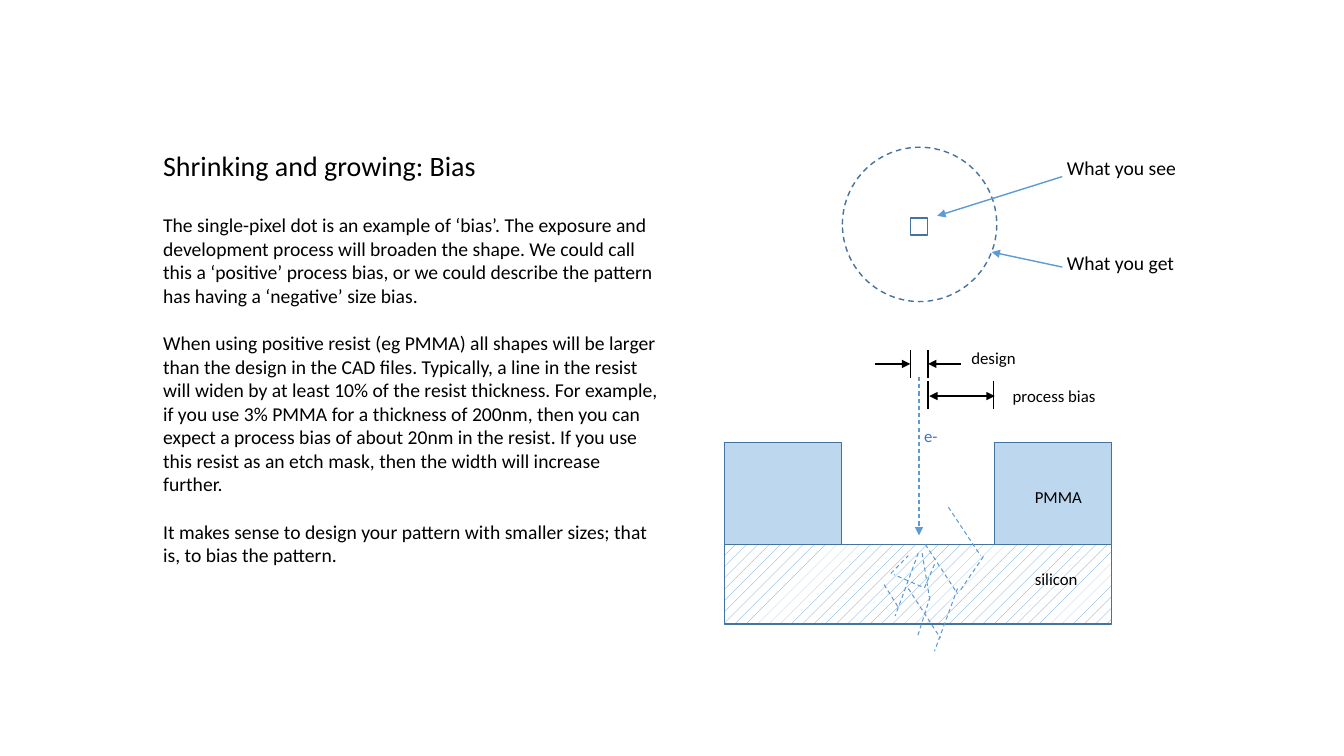
"""Build a slide that explains process bias in resist, with a diagram of exposure."""
from lxml import etree
from pptx import Presentation
from pptx.dml.color import RGBColor
from pptx.enum.dml import MSO_LINE, MSO_PATTERN
from pptx.enum.shapes import MSO_CONNECTOR, MSO_SHAPE
from pptx.enum.text import MSO_ANCHOR, MSO_AUTO_SIZE, PP_ALIGN
from pptx.oxml.ns import qn
from pptx.util import Cm, Pt

BLACK = RGBColor(0x00, 0x00, 0x00)
WHITE = RGBColor(0xFF, 0xFF, 0xFF)
OUTLINE = RGBColor(0x43, 0x73, 0x9E)
BLUE = RGBColor(0x5B, 0x9B, 0xD5)
RESIST = RGBColor(0xBD, 0xD7, 0xEE)
ELECTRON = RGBColor(0x44, 0x72, 0xC4)
STRAIGHT = MSO_CONNECTOR.STRAIGHT
RECTANGLE, OVAL = MSO_SHAPE.RECTANGLE, MSO_SHAPE.OVAL
DASH = MSO_LINE.DASH
PERCENT_10 = MSO_PATTERN.PERCENT_10
FRAME_FORMAT = {
    "word_wrap": True,
    "auto_size": MSO_AUTO_SIZE.NONE,
    "vertical_anchor": MSO_ANCHOR.TOP,
    "margin_left": Cm(0.25),
    "margin_right": Cm(0.25),
    "margin_top": Cm(0.13),
    "margin_bottom": Cm(0.13),
}
PARAGRAPH_FORMAT = {
    "alignment": PP_ALIGN.LEFT,
    "line_spacing": 1.0,
    "space_before": Pt(0),
    "space_after": Pt(0),
}


def write_text(shape, box, paragraphs, size, color=BLACK):
    shape.left, shape.top, shape.width, shape.height = map(Cm, box)
    frame = shape.text_frame
    frame.text = "\n".join(paragraphs)
    for name, value in FRAME_FORMAT.items():
        setattr(frame, name, value)
    for paragraph in frame.paragraphs:
        for name, value in PARAGRAPH_FORMAT.items():
            setattr(paragraph, name, value)
        font = paragraph.runs[0].font
        font.name, font.size, font.color.rgb = "Calibri", Pt(size), color


def draw_line(ends, color, width, arrows=(), dash=None):
    connector = slide.shapes.add_connector(STRAIGHT, *map(Cm, ends))
    line = connector.line
    line.color.rgb, line.width, line.dash_style = color, Pt(width), dash
    properties = connector._element.spPr
    outline = properties.find(qn("a:ln"))
    for arrow in arrows:
        etree.SubElement(outline, qn(f"a:{arrow}"), type="triangle")
    etree.SubElement(properties, qn("a:effectLst"))


presentation = Presentation()
presentation.slide_width, presentation.slide_height = Cm(33.87), Cm(19.05)
slide = presentation.slides.add_slide(presentation.slide_layouts[1])

title, body = slide.placeholders
write_text(title, (3.86, 3.61, 13, 1.2), ["Shrinking and growing: Bias"], 20)
write_text(body, (3.86, 5.24, 13, 9.4), [
    "The single-pixel dot is an example of ‘bias’. The exposure and development "
    "process will broaden the shape. We could call this a ‘positive’ process bias, "
    "or we could describe the pattern has having a ‘negative’ size bias. ",
    "When using positive resist (eg PMMA) all shapes will be larger than the design "
    "in the CAD files. Typically, a line in the resist will widen by at least 10% of "
    "the resist thickness. For example, if you use 3% PMMA for a thickness of 200nm, "
    "then you can expect a process bias of about 20nm in the resist. If you use this "
    "resist as an etch mask, then the width will increase further.",
    "It makes sense to design your pattern with smaller sizes; that is, to bias the pattern.",
], 14)
for paragraph in body.text_frame.paragraphs:
    paragraph.space_after = Pt(17)
    properties = paragraph._p.get_or_add_pPr()
    properties.set("marL", "0")
    properties.set("indent", "0")
    etree.SubElement(properties, qn("a:buNone"))

for kind, box, fill, dash in [
    (OVAL, (21.23, 3.71, 3.89, 3.89), None, DASH),
    (RECTANGLE, (22.94, 5.49, 0.43, 0.43), None, None),
    (RECTANGLE, (18.26, 13.72, 9.75, 2.01), PERCENT_10, None),
    (RECTANGLE, (25.07, 11.15, 2.95, 2.57), RESIST, None),
    (RECTANGLE, (18.26, 11.15, 2.95, 2.57), RESIST, None),
]:
    shape = slide.shapes.add_shape(kind, *map(Cm, box))
    shape.shadow.inherit = False
    shape.line.color.rgb, shape.line.width, shape.line.dash_style = OUTLINE, Pt(1), dash
    if fill is None:
        shape.fill.background()
    elif fill is PERCENT_10:
        shape.fill.patterned()
        shape.fill.pattern = fill
        shape.fill.fore_color.rgb, shape.fill.back_color.rgb = BLUE, WHITE
    else:
        shape.fill.solid()
        shape.fill.fore_color.rgb = fill

for callout in [(26.77, 4.45, 23.62, 5.44), (26.77, 6.73, 24.99, 6.35)]:
    draw_line(callout, BLUE, 1, ["tailEnd"])

draw_line((23.16, 9.5, 23.16, 13.49), BLUE, 0.75, ["tailEnd"], DASH)
for scatter in [
    (23.32, 13.72, 24.13, 14.96),
    (23.14, 13.94, 22.56, 15.52),
    (22.89, 14.83, 23.7, 16.08),
    (24.13, 14.83, 23.55, 16.41),
    (24.21, 14.86, 24.82, 13.97),
    (23.9, 12.78, 24.71, 14),
    (22.28, 14.73, 22.66, 15.34),
    (23.55, 14.22, 23.29, 14.83),
    (23.22, 14.78, 22.53, 14.48),
    (22.45, 14.45, 22.89, 14),
    (23.24, 13.94, 23.42, 15.04),
    (23.44, 15.04, 23.11, 16.08),
]:
    draw_line(scatter, BLUE, 0.75, dash=DASH)

for tick_x, tick_y in [(22.94, 8.83), (23.39, 8.83), (23.39, 9.6), (25.04, 9.6)]:
    draw_line((tick_x, tick_y, tick_x, tick_y + 0.7), BLACK, 1)
for start_x, end_x, y, arrows in [
    (22.05, 22.94, 9.17, ["tailEnd"]),
    (24.21, 23.39, 9.17, ["tailEnd"]),
    (23.42, 25.07, 9.98, ["headEnd", "tailEnd"]),
]:
    draw_line((start_x, y, end_x, y), BLACK, 1, arrows)

for label, left, top, size, color in [
    ("What you see", 26.64, 3.81, 14, BLACK),
    ("What you get", 26.64, 6.2, 14, BLACK),
    ("design", 24.23, 8.64, 12, BLACK),
    ("process bias", 25.27, 9.6, 12, BLACK),
    ("PMMA", 25.83, 12.14, 12, BLACK),
    ("silicon", 25.83, 14.2, 12, BLACK),
    ("e-", 23.04, 10.59, 12, ELECTRON),
]:
    box = (left, top, 3.6, 0.8)
    write_text(slide.shapes.add_textbox(*map(Cm, box)), box, [label], size, color)

presentation.save("out.pptx")
